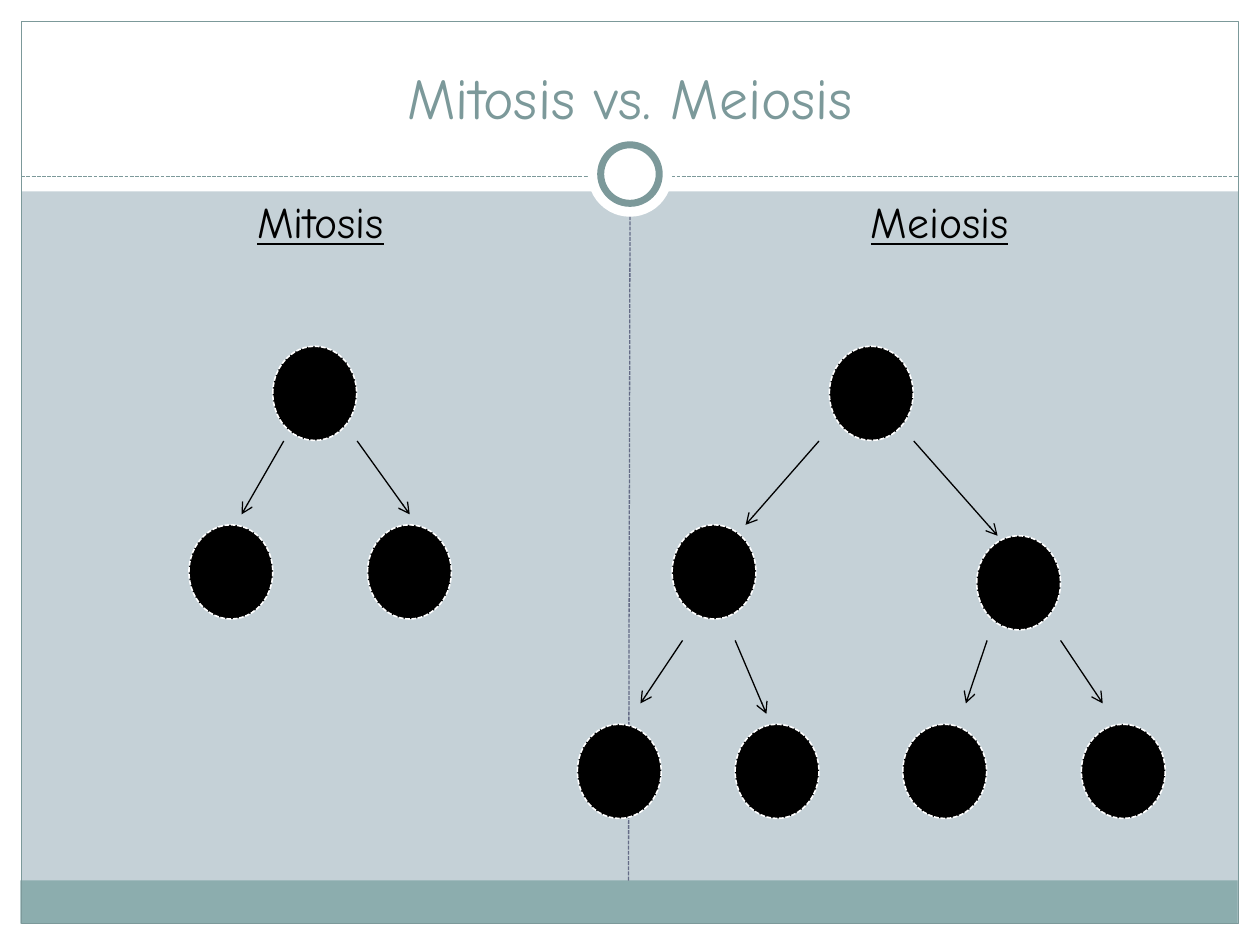
from lxml.etree import SubElement
from pptx import Presentation
from pptx.dml.color import RGBColor
from pptx.enum.dml import MSO_LINE
from pptx.enum.shapes import MSO_CONNECTOR, MSO_SHAPE
from pptx.enum.text import MSO_ANCHOR, PP_ALIGN
from pptx.oxml.ns import qn
from pptx.util import Cm, Pt

COLORS = {"white": "FFFFFF", "backdrop": "C5D1D7", "band": "8CADAE",
          "teal": "7C999A", "divider": "646B86", "black": "000000"}
FONT = "Comic Neue"


def add_figure(kind, box, fill=None, line=None, width=0.75, dash=None):
    """Add a preset shape; box is left, top, width, height in cm."""
    figure = slide.shapes.add_shape(kind, *map(Cm, box))
    figure.shadow.inherit = False
    for part, color in ((figure.fill, fill), (figure.line.fill, line)):
        if color:
            part.solid()
            part.fore_color.rgb = RGBColor.from_string(COLORS[color])
        else:
            part.background()
    if line:
        figure.line.width = Pt(width)
        figure.line.dash_style = dash


def add_line(ends, color, dash=None, arrow=False):
    """Add a straight line; ends is x1, y1, x2, y2 in cm."""
    connector = slide.shapes.add_connector(MSO_CONNECTOR.STRAIGHT, *map(Cm, ends))
    connector.line.color.rgb = RGBColor.from_string(COLORS[color])
    connector.line.width = Pt(0.75)
    connector.line.dash_style = dash
    properties = connector.element.spPr
    if arrow:
        SubElement(properties.find(qn("a:ln")), qn("a:tailEnd"), type="arrow")
    SubElement(properties, qn("a:effectLst"))


deck = Presentation()
deck.slide_width, deck.slide_height = Cm(25.4), Cm(19.05)
slide = deck.slides.add_slide(deck.slide_layouts[5])
slide.background.fill.solid()
slide.background.fill.fore_color.rgb = RGBColor.from_string(COLORS["backdrop"])

# Frame: white margins, footer band, outline and ring
for margin in ((0, 18.62, 25.4, 0.43), (0, 0, 25.4, 3.86),
               (0, 0, 0.43, 19.05), (24.97, 0, 0.43, 19.05)):
    add_figure(MSO_SHAPE.RECTANGLE, margin, fill="white")
add_figure(MSO_SHAPE.RECTANGLE, (0.41, 17.75, 24.54, 0.87), fill="band")
add_figure(MSO_SHAPE.RECTANGLE, (0.43, 0.43, 24.54, 18.19), line="teal")
add_line((0.43, 3.56, 24.97, 3.56), "teal", MSO_LINE.SQUARE_DOT)
add_figure(MSO_SHAPE.OVAL, (11.85, 2.67, 1.7, 1.7), fill="white")
add_figure(MSO_SHAPE.OVAL, (12.11, 2.92, 1.18, 1.18), fill="white", line="teal", width=4)
add_line((12.67, 17.75, 12.7, 4.37), "divider", MSO_LINE.SQUARE_DOT)

# Title, brought in front of the frame, and the two column headings
title = slide.shapes.title
title.element.getparent().append(title.element)
title.left, title.top, title.width, title.height = map(Cm, (0.85, 0.64, 23.7, 2.12))
mitosis, meiosis = (slide.shapes.add_textbox(Cm(left), Cm(3.81), Cm(11.22), Cm(13))
                    for left in (0.85, 13.33))
for holder, wording, anchor, color, before, font_format in (
    (title, "Mitosis vs. Meiosis", MSO_ANCHOR.BOTTOM, "teal", 0, {"size": Pt(33)}),
    (mitosis, "Mitosis", MSO_ANCHOR.TOP, "black", 5, {"size": Pt(25), "underline": True}),
    (meiosis, "Meiosis", MSO_ANCHOR.TOP, "black", 5, {"size": Pt(25), "underline": True}),
):
    frame = holder.text_frame
    frame.word_wrap = True
    frame.vertical_anchor = anchor
    paragraph = frame.paragraphs[0]
    paragraph.alignment = PP_ALIGN.CENTER
    paragraph.space_before = Pt(before)
    run = paragraph.add_run()
    run.text = wording
    run.font.color.rgb = RGBColor.from_string(COLORS[color])
    for attribute, value in {"name": FONT, **font_format}.items():
        setattr(run.font, attribute, value)

# Cells of both divisions
mitosis_cells = [(5.5, 6.98), (3.81, 10.58), (7.41, 10.58)]
meiosis_cells = [(16.72, 6.98), (13.55, 10.58), (19.69, 10.8),
                 (11.64, 14.6), (14.82, 14.6), (18.2, 14.6), (21.8, 14.6)]
for left, top in mitosis_cells + meiosis_cells:
    add_figure(MSO_SHAPE.OVAL, (left, top, 1.69, 1.9), fill="black",
               line="white", width=0.9, dash=MSO_LINE.SQUARE_DOT)

# Arrows grouped by the height at which each division starts
divisions = {
    8.89: [(5.72, 4.87, 10.37), (7.2, 8.26, 10.37),
           (16.51, 15.03, 10.58), (18.42, 20.11, 10.8)],
    12.91: [(13.76, 12.91, 14.18), (14.82, 15.45, 14.39),
            (19.9, 19.47, 14.18), (21.38, 22.23, 14.18)],
}
for start_y, arrows in divisions.items():
    for start_x, end_x, end_y in arrows:
        add_line((start_x, start_y, end_x, end_y), "black", arrow=True)

deck.save("out.pptx")
